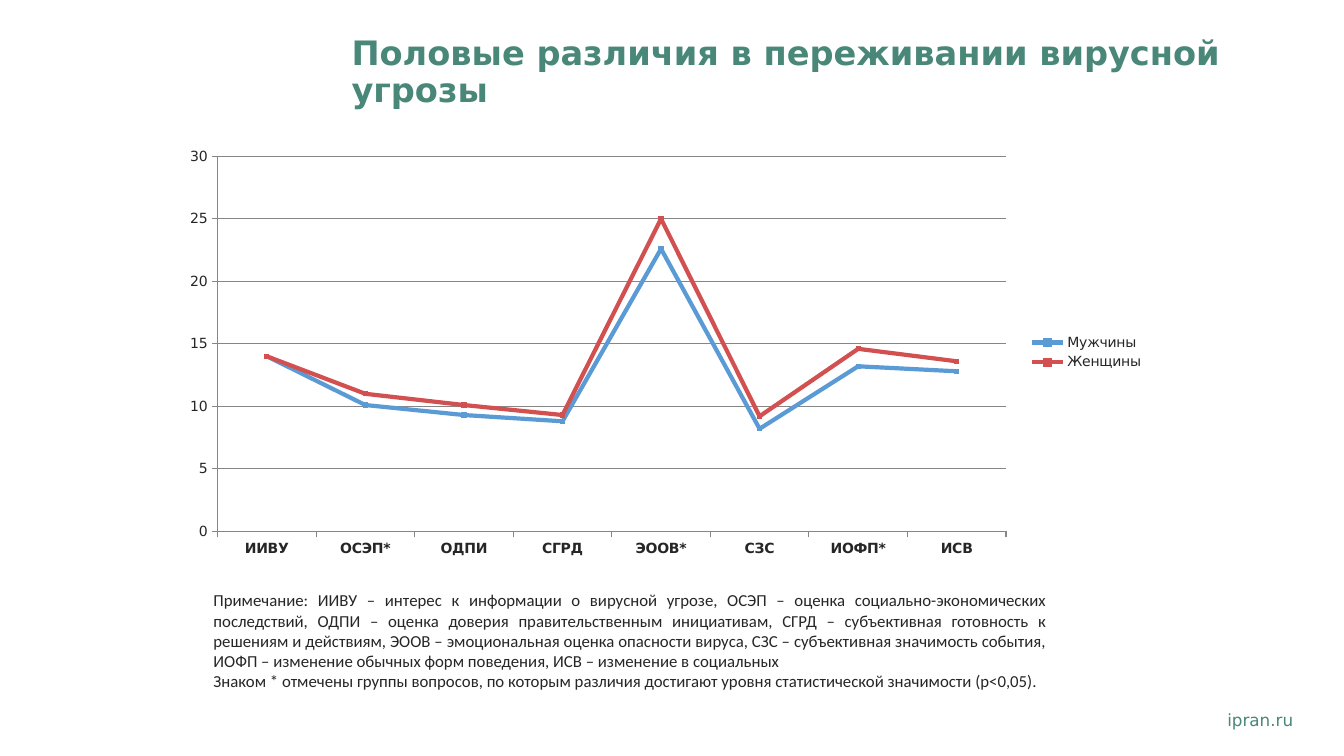
from lxml import etree
from pptx import Presentation
from pptx import util as u
from pptx.chart import data
from pptx.dml.color import RGBColor
from pptx.enum import chart as ch
from pptx.enum import text
from pptx.oxml import ns

GREEN = RGBColor(0x49, 0x87, 0x79)
INK = RGBColor(0x26, 0x26, 0x26)
GRID = RGBColor(0x86, 0x86, 0x86)
BLUE = RGBColor(0x5B, 0x9B, 0xD5)
DARK_BLUE = RGBColor(0x2E, 0x75, 0xB6)
RED = RGBColor(0xD2, 0x50, 0x50)
SANS = "DejaVu Sans"

TITLE = "Половые различия в переживании вирусной угрозы"
SCALES = ["ИИВУ", "ОСЭП*", "ОДПИ", "СГРД", "ЭООВ*", "СЗС", "ИОФП*", "ИСВ"]
# name, values, line colour, marker border colour
GROUPS = [
    ("Мужчины", (14, 10.1, 9.3, 8.8, 22.6, 8.2, 13.2, 12.8), BLUE, DARK_BLUE),
    ("Женщины", (14, 11, 10.1, 9.3, 25, 9.2, 14.6, 13.6), RED, RED),
]
NOTE = [
    "Примечание: ИИВУ – интерес к информации о вирусной угрозе, "
    "ОСЭП – оценка социально-экономических последствий, "
    "ОДПИ – оценка доверия правительственным инициативам, "
    "СГРД – субъективная готовность к решениям и действиям, "
    "ЭООВ – эмоциональная оценка опасности вируса, "
    "СЗС – субъективная значимость события, "
    "ИОФП – изменение обычных форм поведения, ИСВ – изменение в социальных",
    "Знаком * отмечены группы вопросов, по которым различия достигают "
    "уровня статистической значимости (p<0,05).",
]


def add_text(slide, box, lines, size, color, font=SANS, bold=False,
             align=text.PP_ALIGN.LEFT, spacing=1.0):
    frame = slide.shapes.add_textbox(*map(u.Cm, box)).text_frame
    frame.word_wrap = True
    frame.vertical_anchor = text.MSO_ANCHOR.MIDDLE
    frame.text = "\n".join(lines)
    for paragraph in frame.paragraphs:
        paragraph.alignment = align
        paragraph.line_spacing = spacing
        paragraph.font.name = font
        paragraph.font.size = u.Pt(size)
        paragraph.font.bold = bold
        paragraph.font.color.rgb = color


def fix_plot_area(chart, **fractions):
    """Pin the inner plot area to fractions (x, y, w, h) of the chart."""
    plot_area = chart._chartSpace.chart.plotArea
    for old in plot_area.findall(ns.qn("c:layout")):
        plot_area.remove(old)
    layout = etree.Element(ns.qn("c:layout"))
    manual = etree.SubElement(layout, ns.qn("c:manualLayout"))
    settings = {"layoutTarget": "inner", "xMode": "edge", "yMode": "edge", **fractions}
    for tag, value in settings.items():
        etree.SubElement(manual, ns.qn("c:" + tag)).set("val", str(value))
    plot_area.insert(0, layout)


def add_threat_chart(slide, box):
    scores = data.CategoryChartData()
    scores.categories = SCALES
    for name, values, *_ in GROUPS:
        scores.add_series(name, values)
    chart = slide.shapes.add_chart(
        ch.XL_CHART_TYPE.LINE_MARKERS, *map(u.Cm, box), scores).chart
    chart.has_title = False
    chart.font.name = SANS
    chart.font.size = u.Pt(10)
    chart.font.color.rgb = INK
    chart.has_legend = True
    chart.legend.position = ch.XL_LEGEND_POSITION.RIGHT
    chart.legend.include_in_layout = False

    scale_axis, score_axis = chart.category_axis, chart.value_axis
    for axis in (scale_axis, score_axis):
        axis.major_tick_mark = ch.XL_TICK_MARK.OUTSIDE
        axis.minor_tick_mark = ch.XL_TICK_MARK.NONE
        axis.format.line.color.rgb = GRID
        axis.format.line.width = u.Pt(0.75)
    scale_axis.tick_labels.font.bold = True
    score_axis.minimum_scale, score_axis.maximum_scale = 0, 30
    score_axis.major_unit = 5
    score_axis.has_major_gridlines = True
    score_axis.major_gridlines.format.line.color.rgb = GRID
    score_axis.major_gridlines.format.line.width = u.Pt(0.75)

    plot = chart.plots[0]
    plot.vary_by_categories = False
    for series, (_, _, color, border) in zip(plot.series, GROUPS):
        series.smooth = False
        series.format.line.color.rgb = color
        series.format.line.width = u.Pt(3)
        series.marker.style = ch.XL_MARKER_STYLE.SQUARE
        series.marker.size = 3
        series.marker.format.fill.solid()
        series.marker.format.fill.fore_color.rgb = color
        series.marker.format.line.color.rgb = border
    fix_plot_area(chart, x=0.05, y=0.04, w=0.8, h=0.88)


def main():
    deck = Presentation()
    deck.slide_width, deck.slide_height = u.Cm(33.87), u.Cm(19.05)
    slide = deck.slides.add_slide(deck.slide_layouts[6])
    add_text(slide, (30.68, 17.75, 2.64, 0.76), ["ipran.ru"], 12, GREEN)
    add_text(slide, (8.61, 0.86, 22.96, 1.96), [TITLE], 24, GREEN,
             bold=True, spacing=0.9)
    add_threat_chart(slide, (4.24, 3.51, 24.84, 10.74))
    add_text(slide, (5.13, 14.73, 21.51, 2.82), NOTE, 12, INK, font="Calibri",
             align=text.PP_ALIGN.JUSTIFY)
    deck.save("out.pptx")


if __name__ == "__main__":
    main()
